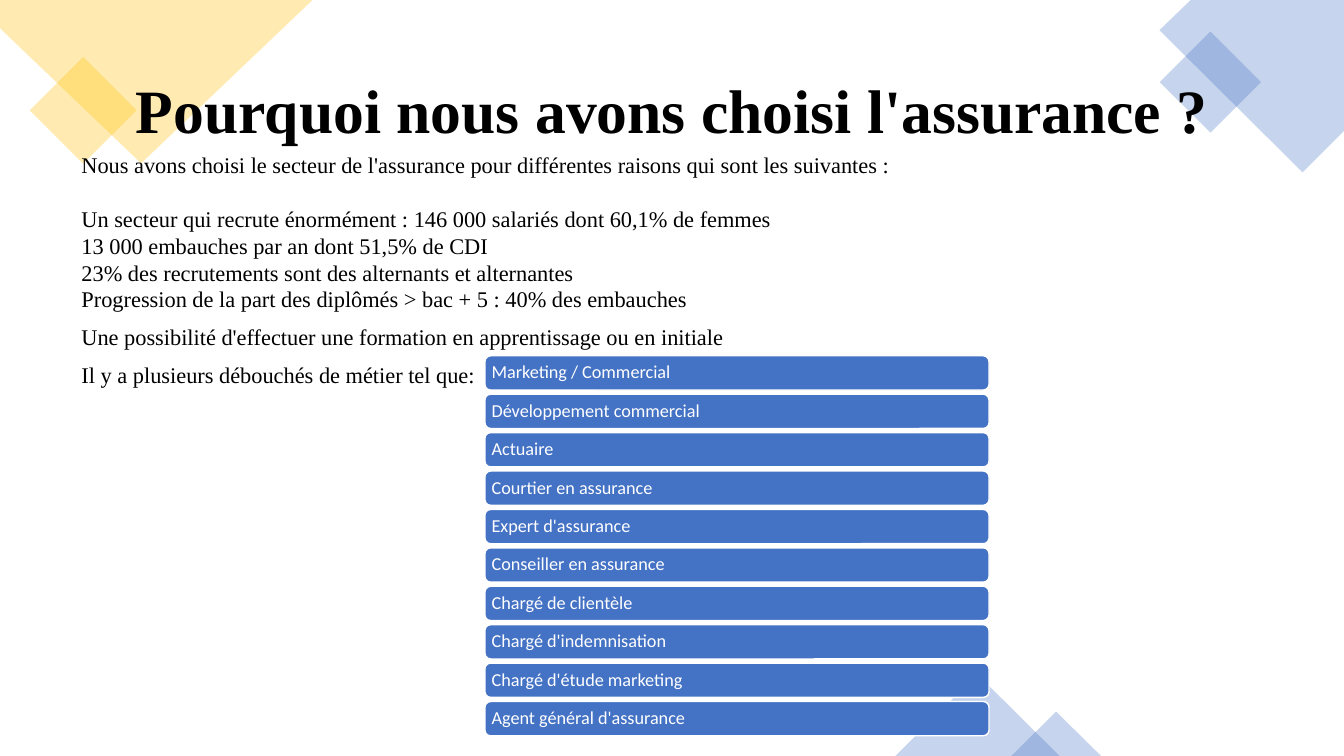
from lxml.etree import SubElement
from pptx import Presentation
from pptx.dml.color import RGBColor
from pptx.enum.shapes import MSO_SHAPE as Shape
from pptx.enum.text import MSO_ANCHOR as Anchor, PP_ALIGN as Align
from pptx.oxml.ns import qn
from pptx.util import Inches, Pt

GOLD, BLUE, WHITE, BLACK = "FFC000", "4472C4", "FFFFFF", "000000"
SERIF = "Times New Roman"

# Text, space before in points, line spacing
REASONS = [
    ("Nous avons choisi le secteur de l'assurance pour différentes raisons qui sont les suivantes :", 10, 0.9),
    ("Un secteur qui recrute énormément : 146 000 salariés dont 60,1% de femmes", 19, 1),
    ("13 000 embauches par an dont 51,5% de CDI", 0, 1),
    ("23% des recrutements sont des alternants et alternantes", 0, 1),
    ("Progression de la part des diplômés > bac + 5 : 40% des embauches", 0, 1),
    ("Une possibilité d'effectuer une formation en apprentissage ou en initiale", 10, 0.9),
    ("Il y a plusieurs débouchés de métier tel que:", 10, 0.9),
]
JOBS = [
    "Marketing / Commercial", "Développement commercial", "Actuaire",
    "Courtier en assurance", "Expert d'assurance", "Conseiller en assurance",
    "Chargé de clientèle", "Chargé d'indemnisation",
    "Chargé d'étude marketing", "Agent général d'assurance",
]
FIRST, LAST = 3.53, 6.96  # tops of the first and last job bars


def rgb(code):
    return RGBColor.from_string(code)


def place(shape, *box):
    shape.left, shape.top, shape.width, shape.height = map(Inches, box)


def style(para, size, font, color, bold=False, space=0.9):
    para.font.size = Pt(size)
    para.font.name = font
    para.font.bold = bold
    para.font.color.rgb = rgb(color)
    para.line_spacing = space


def tint(shape, color):
    """Fill with a see-through colour, without outline or shadow."""
    shape.shadow.inherit = False
    shape.line.fill.background()
    shape.fill.solid()
    shape.fill.fore_color.rgb = rgb(color)
    node = next(shape.fill._xPr.iter(qn("a:srgbClr")))
    SubElement(node, qn("a:alpha"), val="30000")


def add_deco(slide, kind, box, color, turn=0):
    shape = slide.shapes.add_shape(kind, *map(Inches, box))
    shape.rotation = turn
    tint(shape, color)


def add_poly(slide, points, color):
    start, *rest = [(Inches(x), Inches(y)) for x, y in points]
    form = slide.shapes.build_freeform(*start)
    form.add_line_segments(rest)
    tint(form.convert_to_shape(), color)


def set_title(slide, text):
    title = slide.shapes.title
    place(title, 0.92, 0.4, 11.5, 1.45)
    frame = title.text_frame
    frame.text = text
    frame.vertical_anchor = Anchor.MIDDLE
    para = frame.paragraphs[0]
    para.alignment = Align.CENTER
    style(para, 44, SERIF, BLACK, bold=True)


def add_body(slide):
    frame = slide.shapes.add_textbox(*map(Inches, (0.71, 1.48, 11.7, 3.21))).text_frame
    frame.word_wrap = True
    frame.text = "\n".join(text for text, _, _ in REASONS)
    for para, (_, before, space) in zip(frame.paragraphs, REASONS):
        style(para, 16, SERIF, BLACK, space=space)
        para.space_before = Pt(before)


def add_bar(slide, top, text):
    bar = slide.shapes.add_shape(Shape.ROUNDED_RECTANGLE, *map(Inches, (4.81, top, 5, 0.34)))
    bar.shadow.inherit = False
    bar.fill.solid()
    bar.fill.fore_color.rgb = rgb(BLUE)
    bar.line.color.rgb = rgb(WHITE)
    bar.line.width = Pt(1)
    frame = bar.text_frame
    frame.margin_left = frame.margin_right = Inches(0.05)
    frame.margin_top = frame.margin_bottom = Inches(0.05)
    frame.word_wrap = True
    frame.vertical_anchor = Anchor.MIDDLE
    frame.text = text
    para = frame.paragraphs[0]
    para.alignment = Align.LEFT
    style(para, 13, "Calibri", WHITE)


def main():
    deck = Presentation()
    deck.slide_width, deck.slide_height = Inches(13.33), Inches(7.5)
    slide = deck.slides.add_slide(deck.slide_layouts.get_by_name("Title Only"))

    add_deco(slide, Shape.RECTANGLE, (0.45, 0.72, 0.75, 0.75), GOLD, 45)
    add_poly(slide, [(0, 0), (3.1, 0), (1.4, 1.62), (0, 0.28)], GOLD)
    add_poly(slide, [(11.81, 0), (13.33, 0), (13.33, 1.3), (12.92, 1.71), (11.5, 0.3)], BLUE)
    add_deco(slide, Shape.RECTANGLE, (11.65, 0.46, 0.71, 0.71), BLUE, 45)
    add_deco(slide, Shape.ISOSCELES_TRIANGLE, (8.88, 6.69, 1.63, 0.81), BLUE)
    add_deco(slide, Shape.ISOSCELES_TRIANGLE, (10.03, 7.06, 0.89, 0.44), BLUE)

    set_title(slide, "Pourquoi nous avons choisi l'assurance ?")
    title = slide.shapes.title._element
    title.getparent().append(title)  # bring the title in front of the corners
    add_body(slide)
    step = (LAST - FIRST) / (len(JOBS) - 1)
    for row, job in enumerate(JOBS):
        add_bar(slide, FIRST + row * step, job)

    deck.save("out.pptx")


if __name__ == "__main__":
    main()
